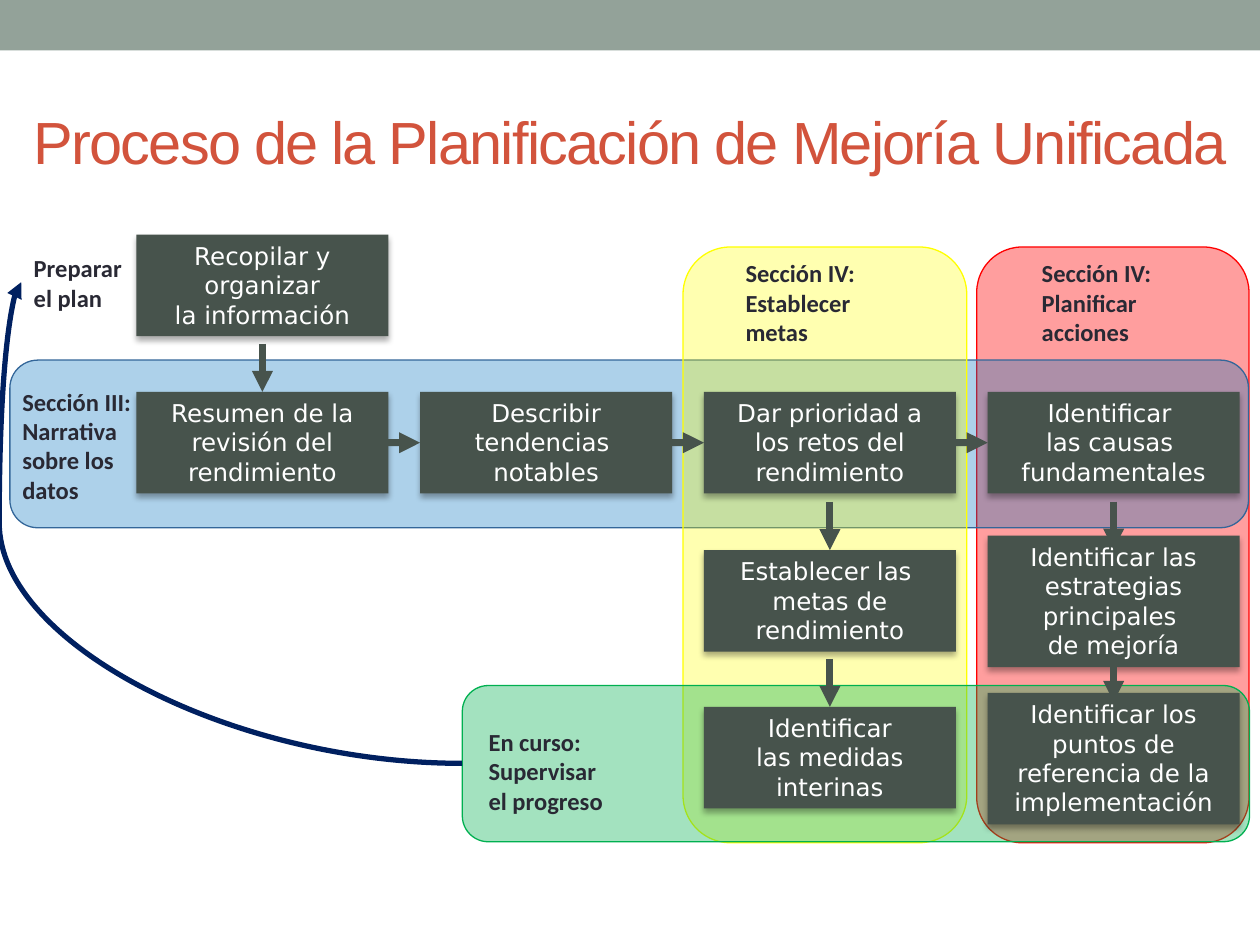
from dataclasses import dataclass

from lxml import etree
from pptx import Presentation
from pptx import util as u
from pptx.dml.color import RGBColor
from pptx.enum import shapes, text
from pptx.oxml.ns import qn


@dataclass(frozen=True)
class Theme:
    band: str = "93A299"
    title: str = "D2533C"
    step: str = "47534C"
    step_text: str = "FFFFFF"
    label: str = "292934"
    loop: str = "002060"
    title_font: str = "Arial"
    label_font: str = "Calibri"
    step_font: str = "DejaVu Sans"
    title_size: float = 34
    body_size: float = 14


def child(parent, tag, **attributes):
    return etree.SubElement(
        parent, qn(tag), {name: str(value) for name, value in attributes.items()}
    )


class ProcessSlide:
    def __init__(self, slide, theme):
        self.shapes = slide.shapes
        self.theme = theme

    def shape(self, kind, place, fill):
        box = self.shapes.add_shape(kind, *map(u.Cm, place))
        box.shadow.inherit = False
        box.fill.solid()
        box.fill.fore_color.rgb = RGBColor.from_string(fill)
        box.line.fill.background()
        return box

    def set_text(self, box, words, font, size, color, bold=False, align=text.PP_ALIGN.LEFT):
        frame = box.text_frame
        frame.text = words
        frame.word_wrap = True
        for para in frame.paragraphs:
            para.alignment = align
            for span in para.runs:
                span.font.name = font
                span.font.size = u.Pt(size)
                span.font.bold = bold
                span.font.color.rgb = RGBColor.from_string(color)
        return frame

    def band(self, place):
        self.shape(shapes.MSO_SHAPE.RECTANGLE, place, self.theme.band)

    def title(self, words, place):
        box = self.shapes.add_textbox(*map(u.Cm, place))
        theme = self.theme
        frame = self.set_text(box, words, theme.title_font, theme.title_size, theme.title)
        frame.vertical_anchor = text.MSO_ANCHOR.MIDDLE
        for span in frame.paragraphs[0].runs:
            span.font._element.set("spc", "-100")

    def section(self, place, fill, opacity, outline):
        box = self.shape(shapes.MSO_SHAPE.ROUNDED_RECTANGLE, place, fill)
        color = box._element.spPr.find(qn("a:solidFill"))[0]
        child(color, "a:alpha", val=opacity * 1000)
        box.line.color.rgb = RGBColor.from_string(outline)
        box.line.width = u.Pt(0.75)

    def label(self, words, place):
        box = self.shapes.add_textbox(*map(u.Cm, place))
        theme = self.theme
        self.set_text(box, words, theme.label_font, theme.body_size, theme.label, bold=True)

    def step(self, words, place):
        theme = self.theme
        box = self.shape(shapes.MSO_SHAPE.RECTANGLE, place, theme.step)
        frame = self.set_text(box, words, theme.step_font, theme.body_size,
                              theme.step_text, align=text.PP_ALIGN.CENTER)
        frame.vertical_anchor = text.MSO_ANCHOR.TOP
        frame.auto_size = text.MSO_AUTO_SIZE.SHAPE_TO_FIT_TEXT
        frame.paragraphs[0].space_before = u.Pt(6)
        frame.paragraphs[0].space_after = u.Pt(6)
        effects = box._element.spPr.find(qn("a:effectLst"))
        shadow = child(effects, "a:outerShdw", blurRad=u.Pt(3.5), dist=u.Pt(2.2),
                       dir=90 * 60000, rotWithShape=0)
        child(child(shadow, "a:srgbClr", val="000000"), "a:alpha", val=32000)
        return box

    def arrow(self, start, end, color, width, kind=shapes.MSO_CONNECTOR.STRAIGHT):
        connector = self.shapes.add_connector(kind, *map(u.Cm, start + end))
        connector.line.color.rgb = RGBColor.from_string(color)
        connector.line.width = u.Pt(width)
        properties = connector._element.spPr
        child(properties.find(qn("a:ln")), "a:tailEnd", type="triangle")
        child(properties, "a:effectLst")
        return connector

    def step_arrow(self, start, end, target=None, side=0):
        connector = self.arrow(start, end, self.theme.step, 4)
        if target is not None:
            connector.end_connect(target, side)

    def loop_arrow(self, start, end, bulge):
        connector = self.arrow(start, end, self.theme.loop, 3, shapes.MSO_CONNECTOR.CURVE)
        geometry = connector._element.spPr.find(qn("a:prstGeom"))
        guides = geometry.find(qn("a:avLst"))
        if guides is None:
            guides = child(geometry, "a:avLst")
        child(guides, "a:gd", name="adj1", fmla=f"val {round(bulge * 100000)}")


STEP_WIDTH, STEP_HEIGHT, TALL_HEIGHT = 5.08, 2.05, 2.65
COLUMNS = [2.75 + 5.72 * index for index in range(4)]
MAIN_ROW = 7.9

SECTIONS = [
    ((19.69, 4.98, 5.49, 12.01), "FF0000", 38, "FF0000"),
    ((0.2, 7.26, 24.97, 3.38), "0070C0", 32, "336699"),
    ((13.77, 4.98, 5.72, 12.01), "FFFF00", 31, "FFFF00"),
    ((9.32, 13.82, 15.87, 3.15), "00B050", 36, "00B050"),
]

LABELS = [
    ("Preparar el plan", (0.43, 4.98, 2.54, 1.45)),
    ("Sección III: Narrativa sobre los datos", (0.2, 7.67, 2.97, 2.06)),
    ("Sección IV:\vEstablecer metas", (14.78, 5.08, 3.89, 1.52)),
    ("Sección IV:\vPlanificar acciones", (20.75, 5.08, 3.81, 1.45)),
    ("En curso:\nSupervisar \vel progreso", (9.6, 14.53, 4.01, 2.06)),
]

STEPS = {
    "collect": ("Recopilar y organizar\vla información", 0, 4.73, STEP_HEIGHT),
    "review": ("Resumen de la revisión del rendimiento", 0, MAIN_ROW, STEP_HEIGHT),
    "trends": ("Describir tendencias \vnotables", 1, MAIN_ROW, STEP_HEIGHT),
    "priorities": ("Dar prioridad a los retos del rendimiento", 2, MAIN_ROW, STEP_HEIGHT),
    "causes": ("Identificar \vlas causas \vfundamentales", 3, MAIN_ROW, STEP_HEIGHT),
    "goals": ("Establecer las \vmetas de rendimiento", 2, 11.09, STEP_HEIGHT),
    "measures": ("Identificar\vlas medidas interinas", 2, 14.25, STEP_HEIGHT),
    "strategies": ("Identificar las estrategias principales \vde mejoría",
                   3, 10.8, TALL_HEIGHT),
    "benchmarks": ("Identificar los puntos de referencia de la implementación",
                   3, 13.97, TALL_HEIGHT),
}


def main():
    deck = Presentation()
    deck.slide_width, deck.slide_height = u.Cm(25.4), u.Cm(19.05)
    page = ProcessSlide(deck.slides.add_slide(deck.slide_layouts[6]), Theme())

    page.band((0, 0, 25.4, 1.02))
    page.title("Proceso de la Planificación de Mejoría Unificada", (0.43, 1.47, 24.77, 2.74))
    for section in SECTIONS:
        page.section(*section)
    for words, place in LABELS:
        page.label(words, place)
    boxes = {
        name: page.step(words, (COLUMNS[column], top, STEP_WIDTH, height))
        for name, (words, column, top, height) in STEPS.items()
    }

    drop = 0.97
    for name in ("review", "goals", "measures"):
        _, column, top, _ = STEPS[name]
        middle = COLUMNS[column] + STEP_WIDTH / 2
        page.step_arrow((middle, top - drop), (middle, top), boxes[name])
    last_middle = COLUMNS[3] + STEP_WIDTH / 2
    for top in (10.11, 13.18):
        page.step_arrow((last_middle, top), (last_middle, top + drop))

    row_middle = MAIN_ROW + STEP_HEIGHT / 2
    for left, name in zip(COLUMNS[1:], ("trends", "priorities", "causes")):
        page.step_arrow((left - 0.84, row_middle), (left, row_middle), boxes[name], 1)
    page.loop_arrow((9.32, 15.39), (0.43, 5.69), 1.05)

    deck.save("out.pptx")


if __name__ == "__main__":
    main()
